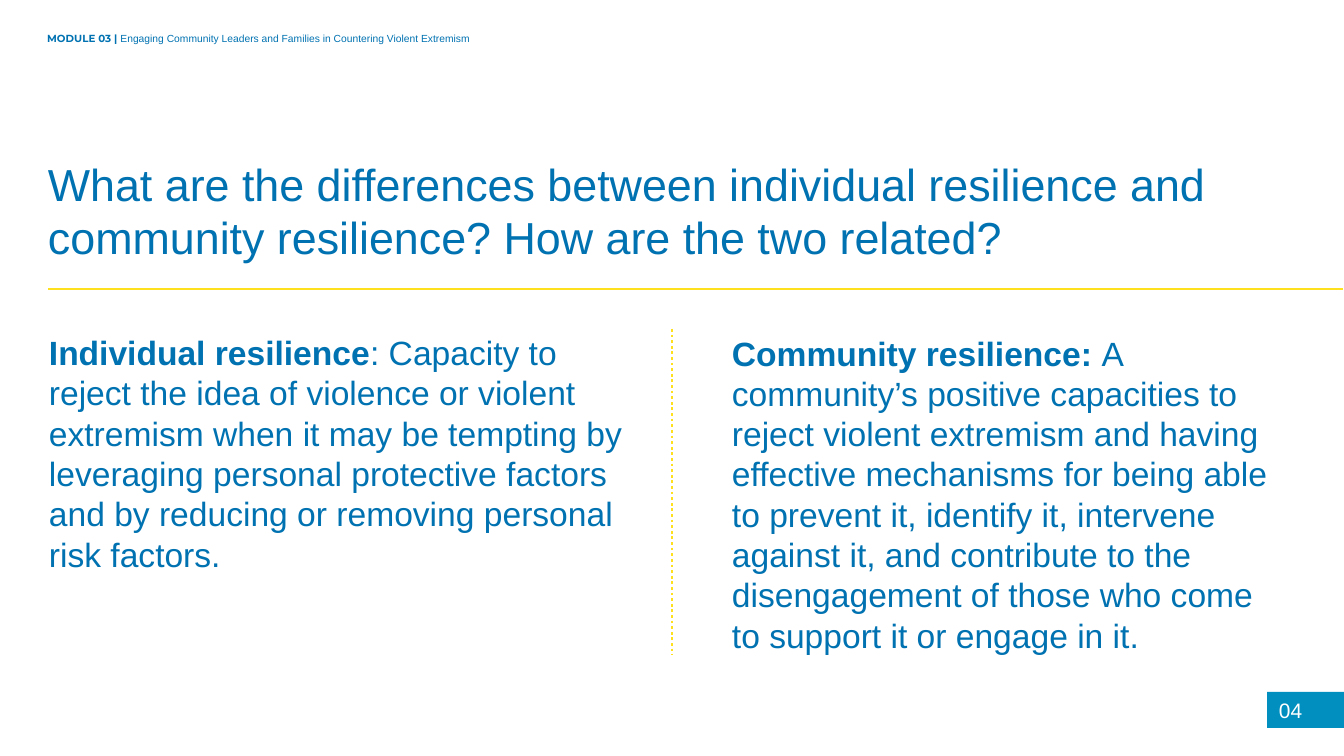
from lxml import etree
from pptx import Presentation
from pptx import util as u
from pptx.dml import color
from pptx.enum import dml, shapes, text
from pptx.oxml import ns

PX = 914400 / 134.4
BLUE, YELLOW, TEAL, WHITE = "0072B1", "FFE01E", "008FBE", "FFFFFF"


def px(*lengths):
    return [u.Emu(round(length * PX)) for length in lengths]


def rgb(code):
    return color.RGBColor.from_string(code)


def apply(target, values):
    for name, value in values.items():
        setattr(target, name, value)


def add_text(slide, box, size, runs, hex_color=BLUE, frame_format=None, **paragraph_format):
    """Each run is (text, bold, font name); a newline makes a line break."""
    frame = slide.shapes.add_textbox(*px(*box)).text_frame
    apply(frame, {"word_wrap": True, **(frame_format or {})})
    paragraph = frame.paragraphs[0]
    apply(paragraph, paragraph_format)
    for words, bold, font_name in runs:
        for index, line in enumerate(words.split("\n")):
            if index:
                paragraph.add_line_break()
            run = paragraph.add_run()
            run.text = line
            apply(run.font, {"size": u.Pt(size), "bold": bold, "name": font_name})
            run.font.color.rgb = rgb(hex_color)


def add_rule(slide, ends, width, dash=None):
    rule = slide.shapes.add_connector(shapes.MSO_CONNECTOR.STRAIGHT, *px(*ends))
    rule.line.color.rgb = rgb(YELLOW)
    apply(rule.line, {"width": u.Pt(width), "dash_style": dash})
    etree.SubElement(rule._element.spPr, ns.qn("a:effectLst"))


def add_badge(slide, box):
    badge = slide.shapes.add_shape(shapes.MSO_SHAPE.RECTANGLE, *px(*box))
    badge.shadow.inherit = False
    badge.fill.solid()
    badge.fill.fore_color.rgb = rgb(TEAL)
    badge.line.fill.background()


def main():
    deck = Presentation()
    deck.slide_width, deck.slide_height = px(1344, 756)
    slide = deck.slides.add_slide(deck.slide_layouts[6])
    bottom = {
        "vertical_anchor": text.MSO_ANCHOR.BOTTOM,
        "margin_left": 0, "margin_top": 0, "margin_right": 0, "margin_bottom": 0,
    }

    # Question and the rule below it
    add_rule(slide, (1343, 289, 48, 289), 1.25)
    add_text(slide, (48, 155, 1191, 109), 24, [
        ("What are the differences between individual resilience and "
         "community resilience? How are the two related?", False, "Arial"),
    ], frame_format=bottom, line_spacing=u.Pt(28.8))

    # Two definitions with a dotted divider
    definitions = [
        ((49, 329, 578, 245), "Individual resilience",
         ": Capacity to reject the idea of violence or violent extremism when it may be "
         "tempting by leveraging personal protective factors and by reducing or removing "
         "personal risk factors."),
        ((732, 329, 567, 326), "Community resilience: ",
         "A community’s positive capacities to reject violent extremism and having "
         "effective mechanisms for being able to prevent it, identify it, intervene "
         "against it, and contribute to the disengagement of those who come\n"
         "to support it or engage in it."),
    ]
    for box, term, meaning in definitions:
        add_text(slide, box, 18, [(term, True, "Arial"), (meaning, False, "Arial")],
                 frame_format=bottom, line_spacing=u.Pt(21.6), space_after=u.Pt(10))
    add_rule(slide, (672, 329, 672, 655), 1.5, dml.MSO_LINE.ROUND_DOT)

    # Page number
    add_badge(slide, (1267, 692, 77, 36))
    add_text(slide, (1279, 698, 65, 25), 11.2, [("04", False, "Arial")], WHITE, bottom)

    # Module header
    add_text(slide, (34, 26, 570, 22), 5.5, [
        ("MODULE 03 | ", True, "Montserrat"),
        ("Engaging Community Leaders and Families in Countering Violent Extremism",
         False, "Arial"),
    ])

    deck.save("out.pptx")


if __name__ == "__main__":
    main()
